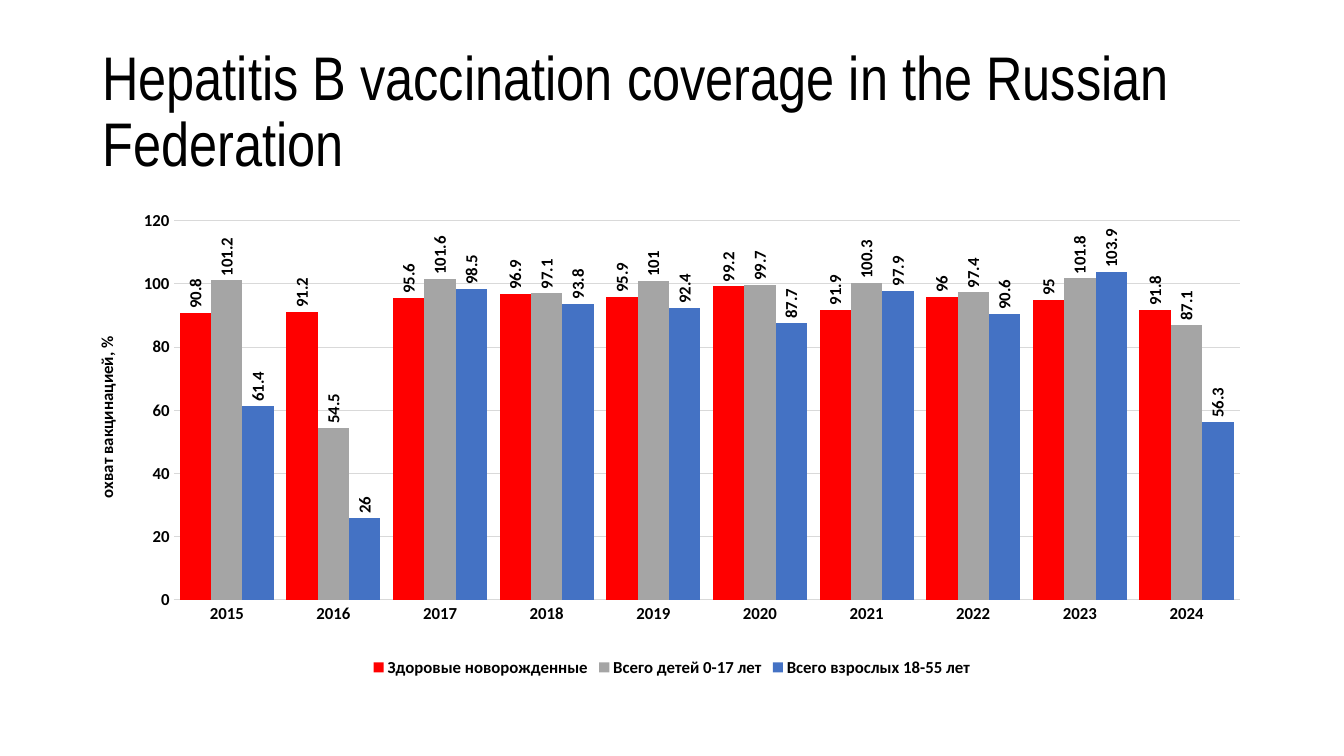
from lxml.etree import SubElement
from pptx import Presentation
from pptx.chart.data import CategoryChartData
from pptx.dml.color import RGBColor
from pptx.enum.chart import XL_CHART_TYPE, XL_LABEL_POSITION, XL_LEGEND_POSITION, XL_TICK_MARK
from pptx.enum.text import MSO_ANCHOR
from pptx.oxml.ns import qn
from pptx.util import Pt

# Content
TITLE = "Hepatitis B vaccination coverage in the Russian Federation"
AXIS_TITLE = "охват вакцинацией, %"
YEARS = [str(year) for year in range(2015, 2025)]
COVERAGE = [
    ("Здоровые новорожденные", "newborns",
     [90.8, 91.2, 95.6, 96.9, 95.9, 99.2, 91.9, 96, 95, 91.8]),
    ("Всего детей 0-17 лет", "children",
     [101.2, 54.5, 101.6, 97.1, 101, 99.7, 100.3, 97.4, 101.8, 87.1]),
    ("Всего взрослых 18-55 лет", "adults",
     [61.4, 26, 98.5, 93.8, 92.4, 87.7, 97.9, 90.6, 103.9, 56.3]),
]

THEME = {
    "newborns": RGBColor.from_string("FF0000"),
    "children": RGBColor.from_string("A5A5A5"),
    "adults": RGBColor.from_string("4472C4"),
    "text": RGBColor.from_string("000000"),
    "grid": RGBColor.from_string("D9D9D9"),
    "paper": RGBColor.from_string("FFFFFF"),
    "title_font": "Arial Narrow",
    "chart_font": "Calibri",
    "title_size": Pt(44),
    "chart_size": Pt(12),
    "hairline": Pt(0.75),
}

# Places: left, top, width, height
TITLE_AREA = (Pt(66), Pt(28.8), Pt(828), Pt(104.4))
CHART_AREA = (Pt(66), Pt(144), Pt(828), Pt(342.7))
PLOT_SHARE = {"x": 0.07, "y": 0.04, "w": 0.92, "h": 0.79}


def style_font(font, name, size, bold):
    font.name, font.size, font.bold = name, size, bold
    font.color.rgb = THEME["text"]


def style_chart_font(font):
    style_font(font, THEME["chart_font"], THEME["chart_size"], True)


def style_line(line, color):
    line.color.rgb = color
    line.width = THEME["hairline"]


def place_plot(chart):
    """Fix the inner plot area as shares of the chart."""
    area = chart.element.find(".//" + qn("c:plotArea"))
    for old in area.findall(qn("c:layout")):
        area.remove(old)
    layout = SubElement(area, qn("c:layout"))
    area.insert(0, layout)
    manual = SubElement(layout, qn("c:manualLayout"))
    settings = {"layoutTarget": "inner", "xMode": "edge", "yMode": "edge", **PLOT_SHARE}
    for tag, value in settings.items():
        SubElement(manual, qn("c:" + tag)).set("val", str(value))


def add_title(page):
    box = page.shapes.add_textbox(*TITLE_AREA)
    style_line(box.line, THEME["paper"])
    frame = box.text_frame
    frame.word_wrap = True
    frame.vertical_anchor = MSO_ANCHOR.MIDDLE
    para = frame.paragraphs[0]
    para.line_spacing = 0.9
    span = para.add_run()
    span.text = TITLE
    style_font(span.font, THEME["title_font"], THEME["title_size"], False)


def add_coverage_chart(page):
    data = CategoryChartData()
    data.categories = YEARS
    for name, _, values in COVERAGE:
        data.add_series(name, values)
    chart = page.shapes.add_chart(XL_CHART_TYPE.COLUMN_CLUSTERED, *CHART_AREA, data).chart
    chart.has_title = False
    style_chart_font(chart.font)
    place_plot(chart)

    # Columns with upright values
    plot = chart.plots[0]
    plot.vary_by_categories = False
    plot.gap_width, plot.overlap = 40, 0
    for series, (_, role, _) in zip(plot.series, COVERAGE):
        series.format.fill.solid()
        series.format.fill.fore_color.rgb = THEME[role]
        series.invert_if_negative = False
        labels = series.data_labels
        labels.show_value = True
        labels.position = XL_LABEL_POSITION.OUTSIDE_END
        style_chart_font(labels.font)
        body = series.data_labels._element.find(".//" + qn("a:bodyPr"))
        body.set("rot", "-5400000")
        body.set("vert", "horz")

    # Axes
    years, percent = chart.category_axis, chart.value_axis
    for axis in (years, percent):
        axis.major_tick_mark = axis.minor_tick_mark = XL_TICK_MARK.NONE
        style_chart_font(axis.tick_labels.font)
    style_line(years.format.line, THEME["grid"])
    percent.format.line.fill.background()
    percent.minimum_scale, percent.maximum_scale, percent.major_unit = 0, 120, 20
    style_line(percent.major_gridlines.format.line, THEME["grid"])
    frame = percent.axis_title.text_frame
    span = frame.paragraphs[0].add_run()
    span.text = AXIS_TITLE
    style_chart_font(span.font)

    # Legend
    chart.has_legend = True
    chart.legend.position = XL_LEGEND_POSITION.BOTTOM
    chart.legend.include_in_layout = False
    style_chart_font(chart.legend.font)


def main():
    deck = Presentation()
    deck.slide_width, deck.slide_height = Pt(960), Pt(540)
    page = deck.slides.add_slide(deck.slide_layouts[6])
    add_title(page)
    add_coverage_chart(page)
    deck.save("out.pptx")


if __name__ == "__main__":
    main()
